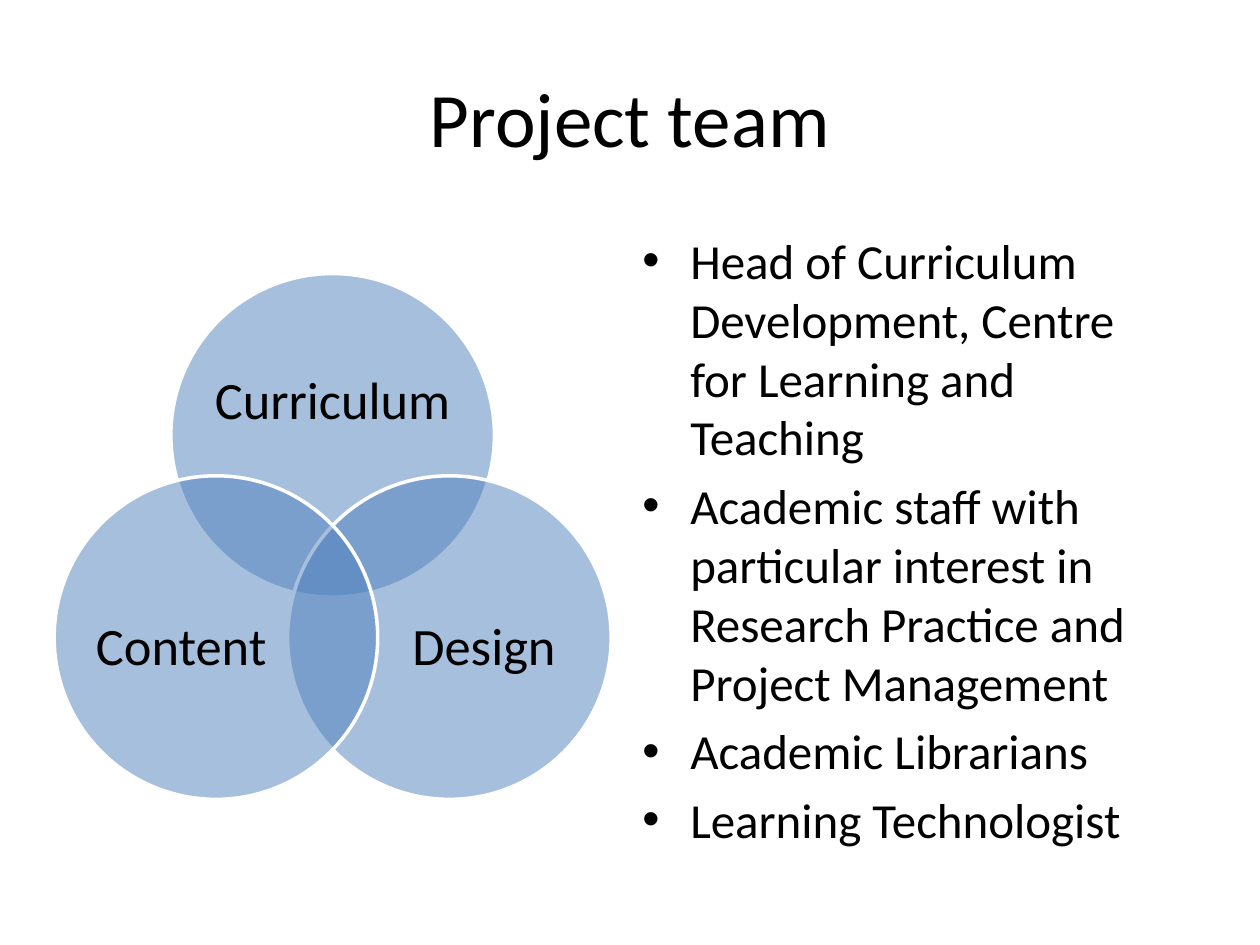
import math
from dataclasses import dataclass

import pptx
import pptx.dml.color
import pptx.enum.shapes
import pptx.enum.text
import pptx.util
from lxml import etree

COLUMNS, ROWS = 100, 75
A = "{http://schemas.openxmlformats.org/drawingml/2006/main}"
ALIGN = pptx.enum.text.PP_ALIGN
ANCHOR = pptx.enum.text.MSO_ANCHOR


@dataclass(frozen=True)
class Theme:
    font: str = "Calibri"
    ink: str = "000000"
    circle: str = "4F81BD"
    outline: str = "FFFFFF"
    opacity: int = 50
    title_size: int = 44
    label_size: int = 30
    body_size: int = 28


def rgb(code):
    return pptx.dml.color.RGBColor.from_string(code)


class SlideBuilder:
    """Places elements on a grid of COLUMNS by ROWS square cells."""

    def __init__(self, theme, deck):
        self.theme = theme
        self.slide = deck.slides.add_slide(deck.slide_layouts[6])
        self.column = deck.slide_width / COLUMNS
        self.row = deck.slide_height / ROWS

    def box(self, left, top, width, height):
        return (round(left * self.column), round(top * self.row),
                round(width * self.column), round(height * self.row))

    def frame(self, place, anchor, inset=None):
        frame = self.slide.shapes.add_textbox(*self.box(*place)).text_frame
        frame.word_wrap = True
        frame.vertical_anchor = anchor
        if inset is not None:
            frame.margin_left = frame.margin_right = inset
            frame.margin_top = frame.margin_bottom = inset
        return frame

    def add_words(self, paragraph, words, size):
        run = paragraph.add_run()
        run.text = words
        run.font.name = self.theme.font
        run.font.size = pptx.util.Pt(size)
        run.font.color.rgb = rgb(self.theme.ink)

    def centred(self, place, words, size, inset=None, spacing=1.0):
        paragraph = self.frame(place, ANCHOR.MIDDLE, inset).paragraphs[0]
        paragraph.alignment = ALIGN.CENTER
        paragraph.line_spacing = spacing
        self.add_words(paragraph, words, size)

    def bullets(self, place, items):
        frame = self.frame(place, ANCHOR.TOP)
        size = self.theme.body_size
        indent = pptx.util.Inches(0.38)
        for index, item in enumerate(items):
            paragraph = frame.add_paragraph() if index else frame.paragraphs[0]
            if index:
                paragraph.space_before = pptx.util.Pt(0.2 * size)
            properties = paragraph._p.get_or_add_pPr()
            properties.set("marL", str(indent))
            properties.set("indent", str(-indent))
            etree.SubElement(properties, A + "buFont", typeface="Arial")
            etree.SubElement(properties, A + "buChar", char="•")
            self.add_words(paragraph, item, size)

    def circle(self, x, y, radius):
        circle = self.slide.shapes.add_shape(
            pptx.enum.shapes.MSO_SHAPE.OVAL,
            *self.box(x - radius, y - radius, 2 * radius, 2 * radius))
        circle.shadow.inherit = False
        circle.fill.solid()
        circle.fill.fore_color.rgb = rgb(self.theme.circle)
        colour = circle._element.spPr.find(f"{A}solidFill/{A}srgbClr")
        etree.SubElement(colour, A + "alpha", val=str(self.theme.opacity * 1000))
        circle.line.color.rgb = rgb(self.theme.outline)
        circle.line.width = pptx.util.Pt(2)

    def venn(self, centre, radius, sets):
        """Circles one radius from the centre; each label is offset from its circle."""
        for index, (name, (shift_x, shift_y), (width, height)) in enumerate(sets):
            angle = math.radians(120 * index - 90)
            x = centre[0] + radius * math.cos(angle)
            y = centre[1] + radius * math.sin(angle)
            self.circle(x, y, radius * 1.2)
            place = (x + shift_x - width / 2, y + shift_y - height / 2, width, height)
            self.centred(place, name, self.theme.label_size, inset=0, spacing=0.9)


def main():
    deck = pptx.Presentation()
    deck.slide_width = pptx.util.Inches(10)
    deck.slide_height = pptx.util.Inches(7.5)
    theme = Theme()
    page = SlideBuilder(theme, deck)

    page.centred((5, 3, 90, 12.5), "Project team", theme.title_size)
    page.bullets((50, 17.8, 44.2, 49.2), [
        "Head of Curriculum Development, Centre for Learning and Teaching",
        "Academic staff with particular interest in Research Practice "
        "and Project Management",
        "Academic Librarians",
        "Learning Technologist",
    ])
    page.venn((26.4, 45.25), 10.7, [
        ("Curriculum", (0, -2.6), (18.8, 11.5)),
        ("Design", (2.75, 0.85), (15.4, 14.1)),
        ("Content", (-2.75, 0.85), (15.4, 14.1)),
    ])
    deck.save("out.pptx")


if __name__ == "__main__":
    main()
